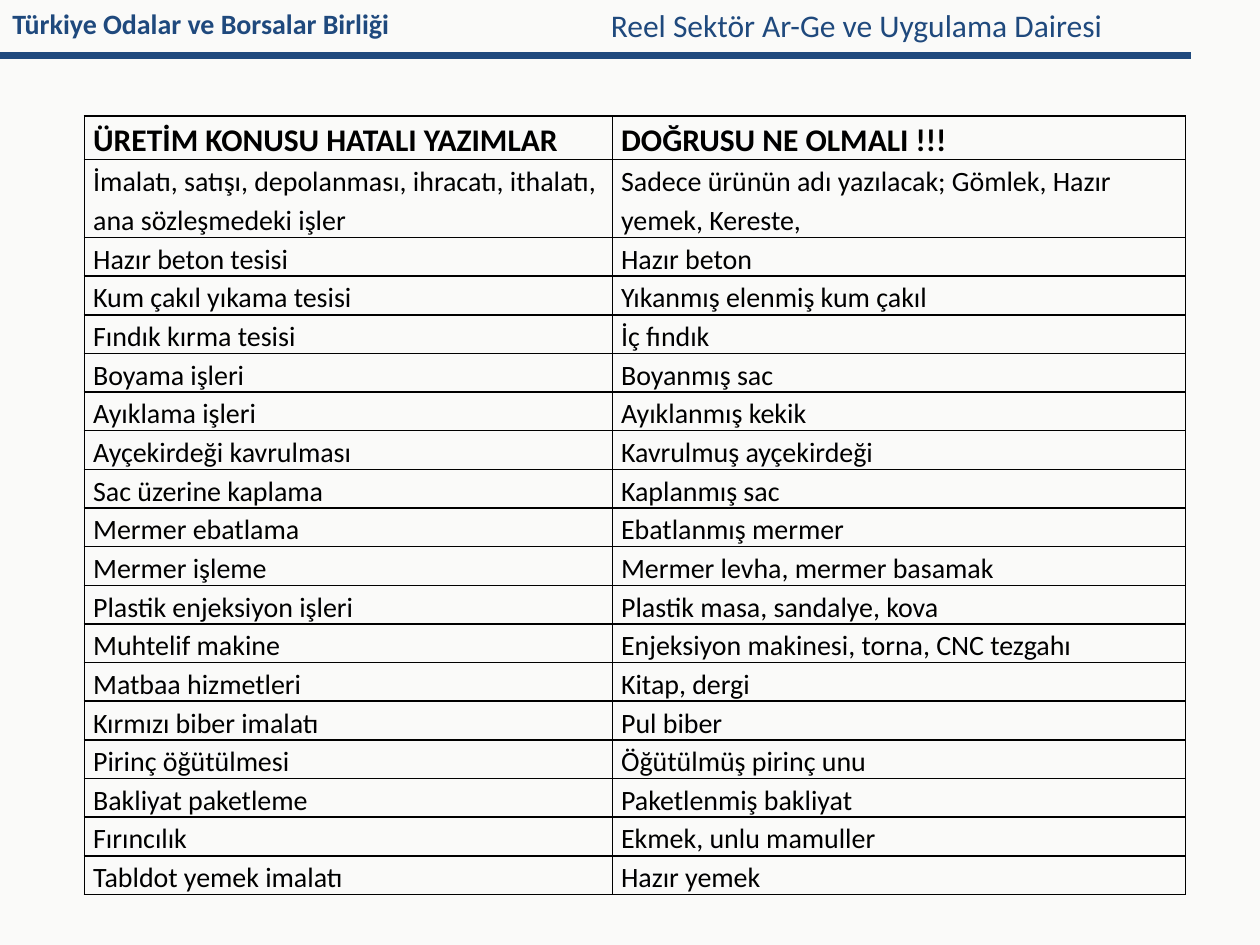
from lxml import etree
from pptx import Presentation
from pptx.dml.color import RGBColor
from pptx.enum import shapes, text
from pptx.oxml import ns, parse_xml
from pptx.util import Inches, Pt

COLORS = {"paper": "FAFAF9", "navy": "1F497D", "ink": "000000"}
ROWS = [
    ("ÜRETİM KONUSU HATALI YAZIMLAR", "DOĞRUSU NE OLMALI !!!"),
    ("İmalatı, satışı, depolanması, ihracatı, ithalatı, ana sözleşmedeki işler",
     "Sadece ürünün adı yazılacak; Gömlek, Hazır yemek, Kereste,"),
    ("Hazır beton tesisi", "Hazır beton"),
    ("Kum çakıl yıkama tesisi", "Yıkanmış elenmiş kum çakıl"),
    ("Fındık kırma tesisi", "İç fındık"),
    ("Boyama işleri", "Boyanmış sac"),
    ("Ayıklama işleri", "Ayıklanmış kekik"),
    ("Ayçekirdeği kavrulması", "Kavrulmuş ayçekirdeği"),
    ("Sac üzerine kaplama", "Kaplanmış sac"),
    ("Mermer ebatlama", "Ebatlanmış mermer"),
    ("Mermer işleme", "Mermer levha, mermer basamak"),
    ("Plastik enjeksiyon işleri", "Plastik masa, sandalye, kova"),
    ("Muhtelif makine", "Enjeksiyon makinesi, torna, CNC tezgahı"),
    ("Matbaa hizmetleri", "Kitap, dergi"),
    ("Kırmızı biber imalatı", "Pul biber"),
    ("Pirinç öğütülmesi", "Öğütülmüş pirinç unu"),
    ("Bakliyat paketleme", "Paketlenmiş bakliyat"),
    ("Fırıncılık", "Ekmek, unlu mamuller"),
    ("Tabldot yemek imalatı", "Hazır yemek"),
]
HEIGHTS = [0.34, 0.62] + [0.3] * (len(ROWS) - 2)
WIDTHS = [4.19, 4.55]


def add_span(para, words, size, color, bold=False):
    span = para.add_run()
    span.text = words
    span.font.name = "Calibri"
    span.font.size = Pt(size)
    span.font.bold = bold
    span.font.color.rgb = RGBColor.from_string(COLORS[color])
    return span


def add_border(cell, side):
    cell._tc.get_or_add_tcPr().append(parse_xml(
        f'<a:{side} {ns.nsdecls("a")} w="12700"><a:solidFill>'
        f'<a:srgbClr val="{COLORS["ink"]}"/></a:solidFill></a:{side}>'))


deck = Presentation()
deck.slide_width, deck.slide_height = Inches(10), Inches(7.5)
page = deck.slides.add_slide(deck.slide_layouts[6])
page.background.fill.solid()
page.background.fill.fore_color.rgb = RGBColor.from_string(COLORS["paper"])

rule = page.shapes.add_connector(
    shapes.MSO_CONNECTOR.STRAIGHT, Inches(0), Inches(0.44), Inches(9.45), Inches(0.44))
rule.line.color.rgb = RGBColor.from_string(COLORS["navy"])
rule.line.width = Pt(4)
etree.SubElement(rule._element.spPr, ns.qn("a:effectLst"))

titles = []
for words, left, width, height, size, bold in [
    ("Türkiye Odalar ve Borsalar Birliği", 0, 8.15, 0.37, 16, True),
    ("Reel Sektör Ar-Ge ve Uygulama Dairesi", 4.75, 4.41, 0.4, 18, False),
]:
    box = page.shapes.add_textbox(Inches(left), Inches(0), Inches(width), Inches(height))
    box.text_frame.word_wrap = True
    box.text_frame.auto_size = text.MSO_AUTO_SIZE.SHAPE_TO_FIT_TEXT
    titles.append(add_span(box.text_frame.paragraphs[0], words, size, "navy", bold))

shadow = parse_xml(
    f'<a:effectLst {ns.nsdecls("a")}><a:outerShdw blurRad="38100" dist="38100" dir="2700000">'
    f'<a:srgbClr val="{COLORS["ink"]}"><a:alpha val="43000"/></a:srgbClr>'
    '</a:outerShdw></a:effectLst>')
titles[1].font._element.find(ns.qn("a:solidFill")).addnext(shadow)

table = page.shapes.add_table(
    len(ROWS), len(WIDTHS), Inches(0.67), Inches(0.92),
    Inches(sum(WIDTHS)), Inches(sum(HEIGHTS))).table
table.first_row = table.horz_banding = False
for column, width in zip(table.columns, WIDTHS):
    column.width = Inches(width)
for r, (words_pair, height) in enumerate(zip(ROWS, HEIGHTS)):
    table.rows[r].height = Inches(height)
    for c, words in enumerate(words_pair):
        cell = table.cell(r, c)
        cell.margin_left = cell.margin_right = Inches(0.07)
        cell.margin_top = cell.margin_bottom = Inches(0)
        for side in ("lnL", "lnR", "lnT", "lnB"):
            add_border(cell, side)
        cell.fill.background()
        para = cell.text_frame.paragraphs[0]
        para.line_spacing = 1.15
        add_span(para, words, 18 if r == 0 else 16, "ink", r == 0)

deck.save("out.pptx")
